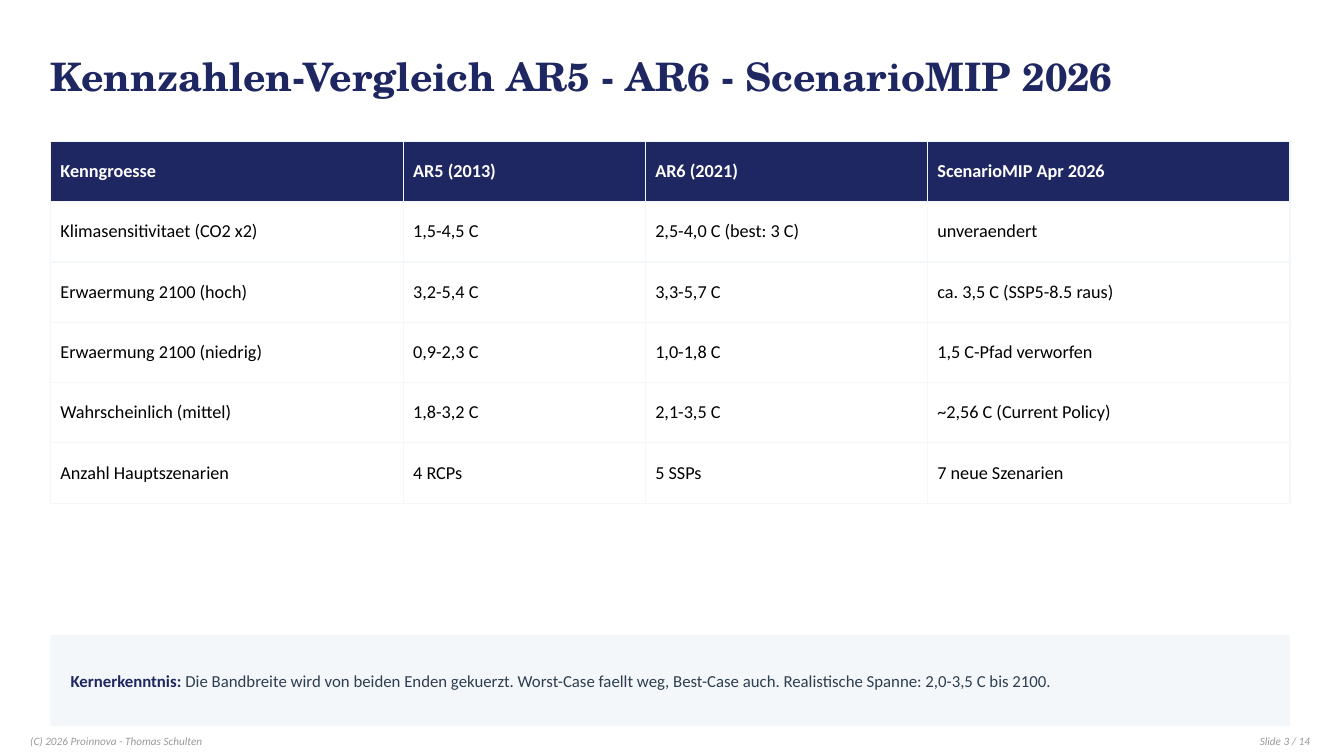
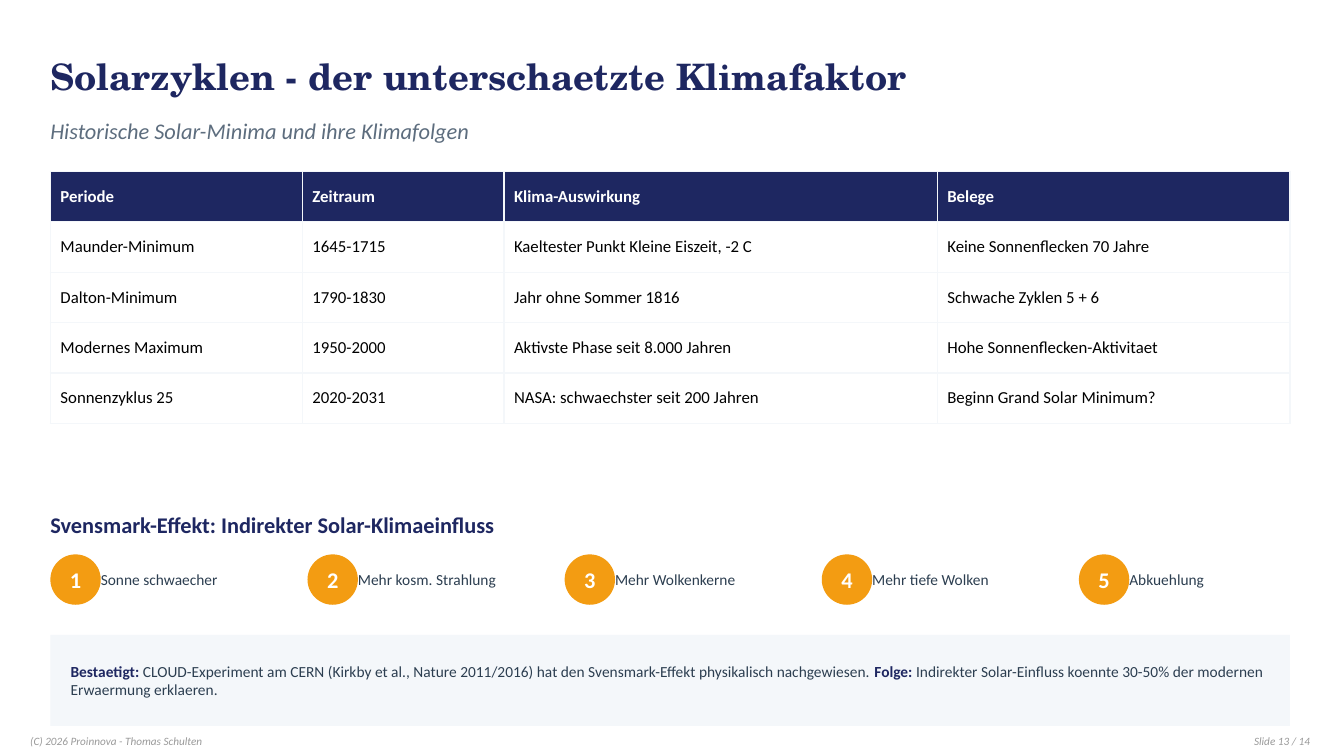
"""Build two slides comparing climate figures and solar cycles."""
from lxml.etree import SubElement
from pptx import Presentation
from pptx.dml.color import RGBColor
from pptx.enum.shapes import MSO_SHAPE as Kind
from pptx.enum.text import MSO_ANCHOR as Anchor, PP_ALIGN as Align
from pptx.oxml.ns import qn
from pptx.util import Cm, Pt

hue = RGBColor.from_string
NAVY, SLATE, STEEL, GREY = "1E2761", "2C3E50", "5D6D7E", "999999"
PALE, AMBER, WHITE, BLACK = "F4F7FA", "F39C12", "FFFFFF", "000000"
SERIF, SANS = "TeX Gyre Schola", "Calibri"
LEFT, WIDE = 1.27, 31.24


def write(frame, parts, size, font=SANS, align=Align.LEFT, italic=False):
    """Fill a frame with (text, colour, bold) parts."""
    line = frame.paragraphs[0]
    line.alignment = align
    for text, tint, bold in parts:
        run = line.add_run()
        run.text = text
        run.font.name, run.font.size = font, Pt(size)
        run.font.bold, run.font.italic = bold, italic
        run.font.color.rgb = hue(tint)


def place(slide, box, parts, size, kind=None, fill=None, pad=0, **look):
    """Add a text box, or a filled shape when a kind is given."""
    spot = [Cm(n) for n in box]
    if kind is None:
        item = slide.shapes.add_textbox(*spot)
    else:
        item = slide.shapes.add_shape(kind, *spot)
        item.shadow.inherit = False
        item.fill.solid()
        item.fill.fore_color.rgb = hue(fill)
        item.line.fill.background()
    frame = item.text_frame
    frame.word_wrap = True
    frame.vertical_anchor = Anchor.MIDDLE
    frame.margin_left = frame.margin_right = Cm(pad)
    frame.margin_top = frame.margin_bottom = 0
    write(frame, parts, size, **look)


pages = [
    {
        "title": "Kennzahlen-Vergleich AR5 - AR6 - ScenarioMIP 2026",
        "size": 28, "num": 3, "top": 3.56, "high": 1.52, "text": 13,
        "cols": [8.89, 6.1, 7.11, 9.14],
        "rows": [
            ["Kenngroesse", "AR5 (2013)", "AR6 (2021)", "ScenarioMIP Apr 2026"],
            ["Klimasensitivitaet (CO2 x2)", "1,5-4,5 C",
             "2,5-4,0 C (best: 3 C)", "unveraendert"],
            ["Erwaermung 2100 (hoch)", "3,2-5,4 C", "3,3-5,7 C",
             "ca. 3,5 C (SSP5-8.5 raus)"],
            ["Erwaermung 2100 (niedrig)", "0,9-2,3 C", "1,0-1,8 C",
             "1,5 C-Pfad verworfen"],
            ["Wahrscheinlich (mittel)", "1,8-3,2 C", "2,1-3,5 C",
             "~2,56 C (Current Policy)"],
            ["Anzahl Hauptszenarien", "4 RCPs", "5 SSPs", "7 neue Szenarien"],
        ],
        "note": [
            ("Kernerkenntnis: ", NAVY, True),
            ("Die Bandbreite wird von beiden Enden gekuerzt. Worst-Case faellt "
             "weg, Best-Case auch. Realistische Spanne: 2,0-3,5 C bis 2100.",
             SLATE, False),
        ],
        "small": 12,
    },
    {
        "title": "Solarzyklen - der unterschaetzte Klimafaktor",
        "size": 26, "num": 13, "top": 4.32, "high": 1.27, "text": 12,
        "cols": [6.35, 5.08, 10.92, 8.89],
        "rows": [
            ["Periode", "Zeitraum", "Klima-Auswirkung", "Belege"],
            ["Maunder-Minimum", "1645-1715",
             "Kaeltester Punkt Kleine Eiszeit, -2 C",
             "Keine Sonnenflecken 70 Jahre"],
            ["Dalton-Minimum", "1790-1830", "Jahr ohne Sommer 1816",
             "Schwache Zyklen 5 + 6"],
            ["Modernes Maximum", "1950-2000",
             "Aktivste Phase seit 8.000 Jahren",
             "Hohe Sonnenflecken-Aktivitaet"],
            ["Sonnenzyklus 25", "2020-2031",
             "NASA: schwaechster seit 200 Jahren",
             "Beginn Grand Solar Minimum?"],
        ],
        "note": [
            ("Bestaetigt: ", NAVY, True),
            ("CLOUD-Experiment am CERN (Kirkby et al., Nature 2011/2016) hat "
             "den Svensmark-Effekt physikalisch nachgewiesen. ", SLATE, False),
            ("Folge: ", NAVY, True),
            ("Indirekter Solar-Einfluss koennte 30-50% der modernen "
             "Erwaermung erklaeren.", SLATE, False),
        ],
        "small": 11,
    },
]

deck = Presentation()
deck.slide_width, deck.slide_height = Cm(33.87), Cm(19.05)

for page in pages:
    slide = deck.slides.add_slide(deck.slide_layouts[6])
    place(slide, (LEFT, 1.02, WIDE, 1.78), [(page["title"], NAVY, True)],
          page["size"], font=SERIF)

    rows, cols = page["rows"], page["cols"]
    table = slide.shapes.add_table(
        len(rows), len(cols), Cm(LEFT), Cm(page["top"]), Cm(WIDE),
        Cm(page["high"] * len(rows))).table
    table.first_row = table.horz_banding = False
    for col, width in zip(table.columns, cols):
        col.width = Cm(width)
    for r, row in enumerate(rows):
        table.rows[r].height = Cm(page["high"])
        for c, text in enumerate(row):
            cell = table.cell(r, c)
            cell.vertical_anchor = Anchor.MIDDLE
            props = cell._tc.get_or_add_tcPr()
            for side in ("a:lnL", "a:lnR", "a:lnT", "a:lnB"):
                edge = SubElement(props, qn(side), w=str(Pt(1)))
                paint = SubElement(edge, qn("a:solidFill"))
                SubElement(paint, qn("a:srgbClr"), val=PALE)
            head = r == 0
            if head:
                cell.fill.solid()
                cell.fill.fore_color.rgb = hue(NAVY)
            else:
                cell.fill.background()
            write(cell.text_frame, [(text, WHITE if head else BLACK, head)],
                  page["text"])

    place(slide, (LEFT, 16, WIDE, 2.29), page["note"], page["small"],
          kind=Kind.RECTANGLE, fill=PALE, pad=0.51)
    place(slide, (0.76, 18.42, 17.78, 0.51),
          [("(C) 2026 Proinnova - Thomas Schulten", GREY, False)], 8,
          italic=True)
    place(slide, (26.67, 18.42, 6.35, 0.51),
          [(f"Slide {page['num']} / 14", GREY, False)], 8,
          align=Align.RIGHT, italic=True)

solar = deck.slides[1]
place(solar, (LEFT, 2.79, WIDE, 1.02),
      [("Historische Solar-Minima und ihre Klimafolgen", STEEL, False)], 16,
      italic=True)
place(solar, (LEFT, 12.7, WIDE, 1.02),
      [("Svensmark-Effekt: Indirekter Solar-Klimaeinfluss", NAVY, True)], 16)

steps = ["Sonne schwaecher", "Mehr kosm. Strahlung", "Mehr Wolkenkerne",
         "Mehr tiefe Wolken", "Abkuehlung"]
SPAN, DOT = 6.48, 1.27
for i, step in enumerate(steps):
    x = LEFT + i * SPAN
    place(solar, (x, 13.97, DOT, DOT), [(str(i + 1), WHITE, True)], 16,
          kind=Kind.OVAL, fill=AMBER, align=Align.CENTER)
    place(solar, (x + DOT, 13.97, 5.08, DOT), [(step, SLATE, False)], 11)

deck.save("out.pptx")
